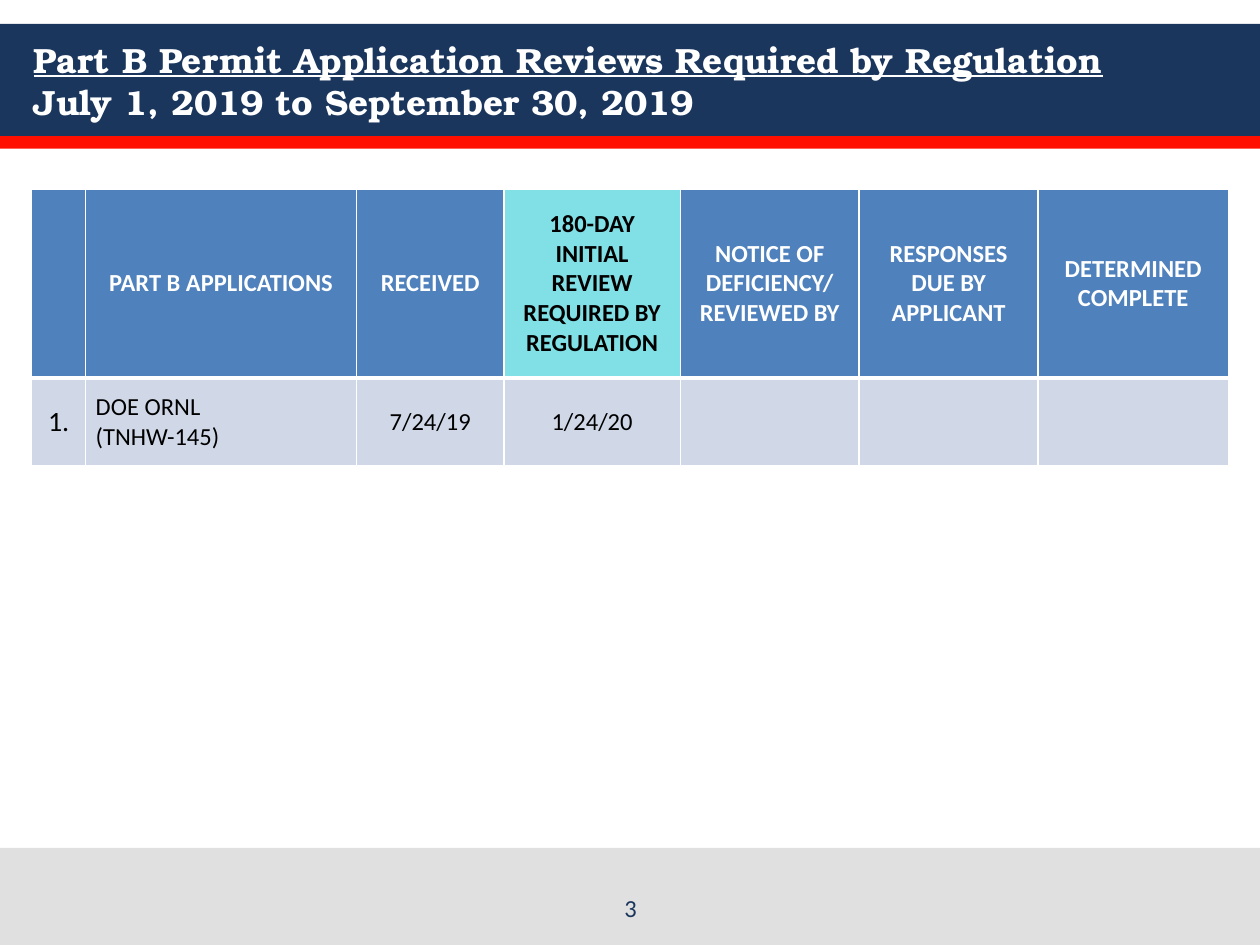
from lxml.etree import SubElement
from pptx import Presentation
from pptx.dml.color import RGBColor
from pptx.enum.shapes import MSO_SHAPE
from pptx.enum.text import MSO_ANCHOR as Anchor, PP_ALIGN as Align
from pptx.oxml.ns import qn
from pptx.util import Inches, Pt

NAVY = RGBColor(0x1B, 0x36, 0x5D)
RED = RGBColor(0xFF, 0x0F, 0x00)
GRAY = RGBColor(0xE0, 0xE0, 0xE0)
BLUE = RGBColor(0x4F, 0x81, 0xBD)
AQUA = RGBColor(0x81, 0xE0, 0xE5)
PALE = RGBColor(0xD0, 0xD8, 0xE8)
WHITE = RGBColor(0xFF, 0xFF, 0xFF)
BLACK = RGBColor(0x00, 0x00, 0x00)

HEADERS = ["", "PART B APPLICATIONS", "RECEIVED",
           "180-DAY INITIAL REVIEW\nREQUIRED BY REGULATION",
           "NOTICE OF DEFICIENCY/ REVIEWED BY",
           "RESPONSES DUE BY APPLICANT", "DETERMINED COMPLETE"]
APPLICATION = ["1.", "DOE ORNL\n(TNHW-145)", "7/24/19", "1/24/20", "", "", ""]
COLUMN_WIDTHS = [0.43, 2.15, 1.17, 1.4, 1.42, 1.42, 1.51]
ROW_HEIGHTS = [1.5, 0.7]
NUMBER_COLUMN, NAME_COLUMN, REVIEW_COLUMN = 0, 1, 3


def add_text(paragraph, text, size=14, font="Calibri", color=BLACK,
             bold=False, underline=False, align=Align.LEFT):
    """Append a formatted run to the paragraph."""
    paragraph.alignment = align
    run = paragraph.add_run()
    run.text = text
    run.font.size = Pt(size)
    run.font.name = font
    run.font.color.rgb = color
    run.font.bold = bold
    run.font.underline = underline


def add_band(slide, left, top, width, height, color):
    """Draw a plain coloured band."""
    band = slide.shapes.add_shape(MSO_SHAPE.RECTANGLE, Inches(left), Inches(top),
                                  Inches(width), Inches(height))
    band.shadow.inherit = False
    band.fill.solid()
    band.fill.fore_color.rgb = color
    band.line.fill.background()


def add_text_frame(slide, left, top, width, height, anchor):
    """Add a wrapping text box and return its frame."""
    frame = slide.shapes.add_textbox(Inches(left), Inches(top), Inches(width),
                                     Inches(height)).text_frame
    frame.word_wrap = True
    frame.vertical_anchor = anchor
    return frame


def add_title(slide, left, top, width, height):
    """Place the title bands and the two-line heading."""
    add_band(slide, left, top, width, height, NAVY)
    add_band(slide, left, top + height, width, 0.1, RED)
    frame = add_text_frame(slide, left + 0.17, top, width - 0.33, height, Anchor.MIDDLE)
    heading = frame.paragraphs[0]
    style = dict(size=20, font="TeX Gyre Bonum", color=WHITE, bold=True)
    add_text(heading, "Part B Permit Application Reviews Required by Regulation",
             underline=True, **style)
    heading.add_line_break()
    add_text(heading, "July 1, 2019 to September 30, 2019", **style)


def set_borders(cell, **widths):
    """Give the cell white borders of the given point widths."""
    properties = cell._tc.get_or_add_tcPr()
    for side, width in widths.items():
        line = SubElement(properties, qn(f"a:ln{side}"), w=str(Pt(width)))
        fill = SubElement(line, qn("a:solidFill"))
        SubElement(fill, qn("a:srgbClr"), val=str(WHITE))


def fill_cell(cell, text, fill, **style):
    """Set the cell's fill, margins and paragraphs."""
    cell.fill.solid()
    cell.fill.fore_color.rgb = fill
    cell.vertical_anchor = Anchor.MIDDLE
    cell.margin_left = cell.margin_right = Inches(0.08)
    cell.margin_top = cell.margin_bottom = 0
    if not text:
        return
    for index, part in enumerate(text.split("\n")):
        frame = cell.text_frame
        paragraph = frame.add_paragraph() if index else frame.paragraphs[0]
        add_text(paragraph, part, **style)


def add_review_table(slide, left, top, width, height):
    """Place the table of permit application reviews."""
    table = slide.shapes.add_table(len(ROW_HEIGHTS), len(COLUMN_WIDTHS), Inches(left),
                                   Inches(top), Inches(width), Inches(height)).table
    for row, row_height in zip(table.rows, ROW_HEIGHTS):
        row.height = Inches(row_height)
    for index, column_width in enumerate(COLUMN_WIDTHS):
        table.columns[index].width = Inches(column_width)
        header, entry = table.cell(0, index), table.cell(1, index)
        set_borders(header, L=1, R=1, T=1, B=3)
        set_borders(entry, L=1, R=1, T=3, B=1)
        is_review = index == REVIEW_COLUMN
        fill_cell(header, HEADERS[index], AQUA if is_review else BLUE, bold=True,
                  color=BLACK if is_review else WHITE, align=Align.CENTER)
        fill_cell(entry, APPLICATION[index], PALE,
                  size=16 if index == NUMBER_COLUMN else 14,
                  align=Align.LEFT if index == NAME_COLUMN else Align.CENTER)


def add_footer(slide, left, top, width, height):
    """Place the footer band with the page number."""
    add_band(slide, left, top, width, height, GRAY)
    frame = add_text_frame(slide, left + 3.42, top + 0.24, 3.17, 0.4, Anchor.BOTTOM)
    add_text(frame.paragraphs[0], "3", color=NAVY, align=Align.CENTER)


def main():
    """Build and save the slide."""
    presentation = Presentation()
    presentation.slide_width = Inches(10)
    presentation.slide_height = Inches(7.5)
    slide = presentation.slides.add_slide(presentation.slide_layouts[6])
    add_title(slide, 0, 0.19, 10, 0.89)
    add_review_table(slide, 0.25, 1.5, sum(COLUMN_WIDTHS), sum(ROW_HEIGHTS))
    add_footer(slide, 0, 6.73, 10, 0.77)
    presentation.save("out.pptx")


if __name__ == "__main__":
    main()
